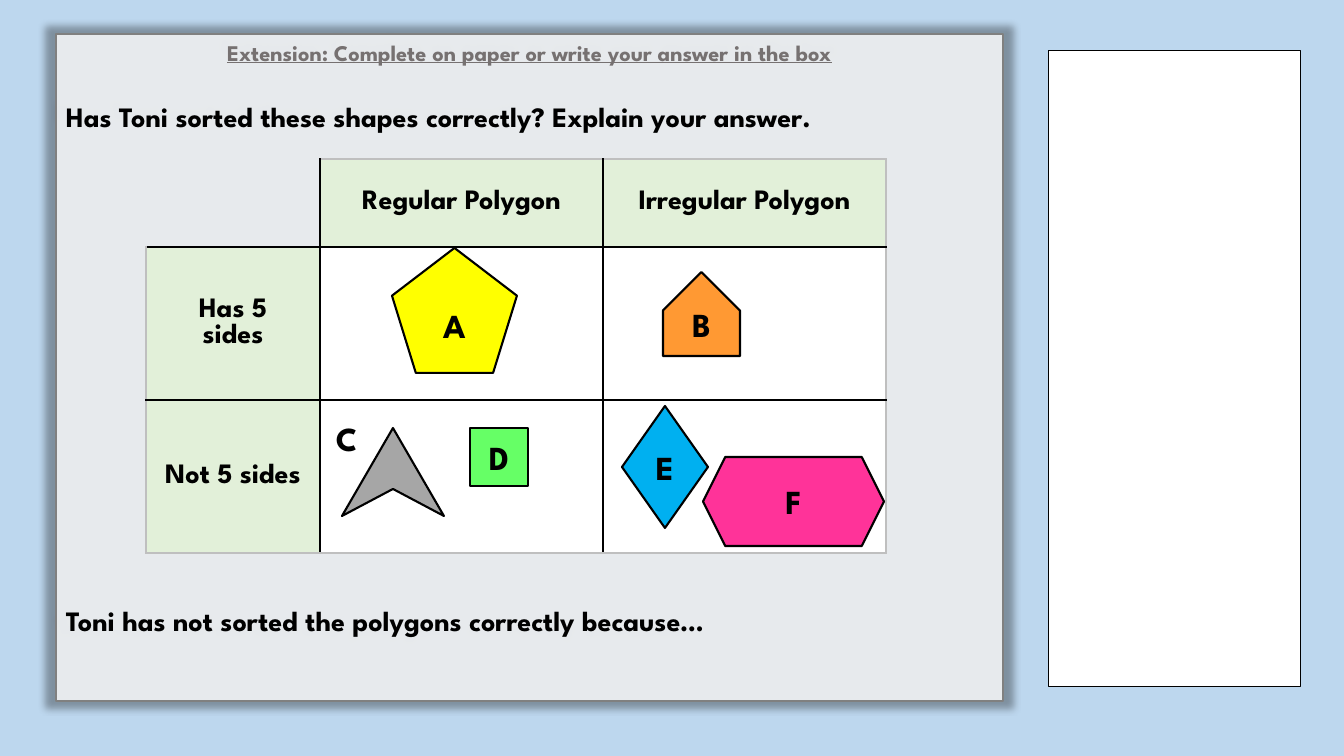
"""Builds a maths slide on sorting regular and irregular polygons."""
from lxml.etree import SubElement
from pptx import Presentation
from pptx.dml.color import RGBColor
from pptx.enum.shapes import MSO_SHAPE
from pptx.enum.text import MSO_ANCHOR, PP_ALIGN
from pptx.oxml import parse_xml
from pptx.oxml.ns import nsdecls, qn
from pptx.util import Emu, Pt

BLACK = RGBColor(0x00, 0x00, 0x00)
WHITE = RGBColor(0xFF, 0xFF, 0xFF)
SKY = RGBColor(0xBD, 0xD7, 0xEE)
GREY = RGBColor(0x80, 0x80, 0x80)
TITLE = RGBColor(0x76, 0x71, 0x71)
EDGE = RGBColor(0xBF, 0xBF, 0xBF)
MINT = RGBColor(0xE2, 0xF0, 0xD9)
YELLOW = RGBColor(0xFF, 0xFF, 0x00)
ORANGE = RGBColor(0xFF, 0x99, 0x33)
GREEN = RGBColor(0x66, 0xFF, 0x66)
BLUE = RGBColor(0x00, 0xB0, 0xF0)
PINK = RGBColor(0xFF, 0x33, 0x99)
SILVER = RGBColor(0xA6, 0xA6, 0xA6)

FONT = "League Spartan"
SCALE = 914400 / 100.8
PLAIN = "{2D5ABB26-0587-4C30-8999-92F81FD0307C}"

PANEL = (56, 34, 947, 667)
ANSWER = (1049, 51, 252, 636)
LINES = [
    ("Extension: Complete on paper or write your answer in the box", 16, TITLE, 0),
    ("Has Toni sorted these shapes correctly? Explain your answer.", 20, BLACK, 24),
    ("Toni has not sorted the polygons correctly because…", 20, BLACK, 336),
]
GRID = [
    ["", "Regular Polygon", "Irregular Polygon"],
    ["Has 5 sides", "", ""],
    ["Not 5 sides", "", ""],
]
CORNER = (146, 159)
COLS = [174, 283, 283]
ROWS = [88, 153, 153]
POLYGONS = [
    ("B", MSO_SHAPE.SNIP_2_SAME_RECTANGLE, (663, 272, 77, 84), ORANGE),
    ("D", MSO_SHAPE.RECTANGLE, (470, 428, 58, 58), GREEN),
    ("E", MSO_SHAPE.DIAMOND, (622, 406, 86, 122), BLUE),
    ("A", MSO_SHAPE.REGULAR_PENTAGON, (392, 248, 125, 125), YELLOW),
    ("F", MSO_SHAPE.HEXAGON, (703, 457, 181, 89), PINK),
]
ARROW = [(393, 428), (444, 516), (393, 489), (342, 516)]
LABEL = ("C", (326, 413, 42, 50))


def px(size):
    return Emu(round(size * SCALE))


def paint(shape, fill, line, width):
    shape.shadow.inherit = False
    shape.fill.solid()
    shape.fill.fore_color.rgb = fill
    shape.line.color.rgb = line
    shape.line.width = Pt(width)


def draw(slide, kind, box, fill, line=BLACK, width=1.5):
    shape = slide.shapes.add_shape(kind, *map(px, box))
    paint(shape, fill, line, width)
    return shape


def style(para, size, color=BLACK, align=PP_ALIGN.CENTER):
    para.alignment = align
    for run in para.runs:
        font = run.font
        font.name, font.size, font.bold = FONT, Pt(size), True
        font.color.rgb = color


def add_panel(slide):
    panel = draw(slide, MSO_SHAPE.RECTANGLE, PANEL, WHITE, GREY, 1)
    props = panel._element.spPr
    SubElement(props.find(".//" + qn("a:srgbClr")), qn("a:alpha"), val="82000")
    props.replace(props.find(qn("a:effectLst")), parse_xml(
        f'<a:effectLst {nsdecls("a")}><a:outerShdw blurRad="63500" sx="102000" '
        'sy="102000" algn="ctr" rotWithShape="0"><a:srgbClr val="000000">'
        '<a:alpha val="40000"/></a:srgbClr></a:outerShdw></a:effectLst>'))
    frame = panel.text_frame
    frame.word_wrap = True
    frame.vertical_anchor = MSO_ANCHOR.TOP
    frame.text = "\n".join(line[0] for line in LINES)
    for para, (_, size, color, gap) in zip(frame.paragraphs, LINES):
        style(para, size, color, PP_ALIGN.LEFT)
        para.space_before = Pt(gap)
    head = frame.paragraphs[0]
    head.alignment = PP_ALIGN.CENTER
    head.runs[0].font.underline = True


def border(cell, side, color):
    fill = (f'<a:solidFill><a:srgbClr val="{color}"/></a:solidFill>'
            if color else "<a:noFill/>")
    return parse_xml(f'<a:{side} {nsdecls("a")} w="12700">{fill}</a:{side}>')


def add_grid(slide):
    frame = slide.shapes.add_table(len(ROWS), len(COLS), *map(
        px, (*CORNER, sum(COLS), sum(ROWS))))
    table = frame.table
    table.first_row = table.horz_banding = False
    table._tbl.tblPr.find(qn("a:tableStyleId")).text = PLAIN
    for col, width in zip(table.columns, COLS):
        col.width = px(width)
    for row, height in zip(table.rows, ROWS):
        row.height = px(height)
    for r, texts in enumerate(GRID):
        for c, text in enumerate(texts):
            cell = table.cell(r, c)
            cell.text = text
            cell.vertical_anchor = MSO_ANCHOR.MIDDLE
            cell.margin_left = cell.margin_right = px(19)
            cell.margin_top = cell.margin_bottom = px(9)
            style(cell.text_frame.paragraphs[0], 20)
            blank = r == c == 0
            if blank:
                cell.fill.background()
            else:
                cell.fill.solid()
                cell.fill.fore_color.rgb = MINT if text else WHITE
            rim = None if blank else EDGE
            sides = {
                "lnL": BLACK if c else rim,
                "lnR": BLACK if c < len(COLS) - 1 else rim,
                "lnT": BLACK if r else rim,
                "lnB": BLACK if r < len(ROWS) - 1 else rim,
            }
            props = cell._tc.get_or_add_tcPr()
            for spot, (side, color) in enumerate(sides.items()):
                props.insert(spot, border(cell, side, color))


def add_shapes(slide):
    for name, kind, box, fill in POLYGONS:
        shape = draw(slide, kind, box, fill)
        if kind == MSO_SHAPE.SNIP_2_SAME_RECTANGLE:
            shape.adjustments[0] = 0.5
        frame = shape.text_frame
        frame.text = name
        frame.vertical_anchor = MSO_ANCHOR.MIDDLE
        style(frame.paragraphs[0], 24)
    pen = slide.shapes.build_freeform(*ARROW[0], scale=SCALE)
    pen.add_line_segments(ARROW[1:], close=True)
    paint(pen.convert_to_shape(), SILVER, BLACK, 1.5)
    text, box = LABEL
    frame = slide.shapes.add_textbox(*map(px, box)).text_frame
    frame.word_wrap = True
    frame.text = text
    style(frame.paragraphs[0], 24, align=PP_ALIGN.LEFT)


def main():
    deck = Presentation()
    deck.slide_width, deck.slide_height = px(1344), px(756)
    slide = deck.slides.add_slide(deck.slide_layouts[6])
    slide.background.fill.solid()
    slide.background.fill.fore_color.rgb = SKY
    add_panel(slide)
    add_grid(slide)
    add_shapes(slide)
    draw(slide, MSO_SHAPE.RECTANGLE, ANSWER, WHITE, width=0.75)
    deck.save("out.pptx")


if __name__ == "__main__":
    main()
